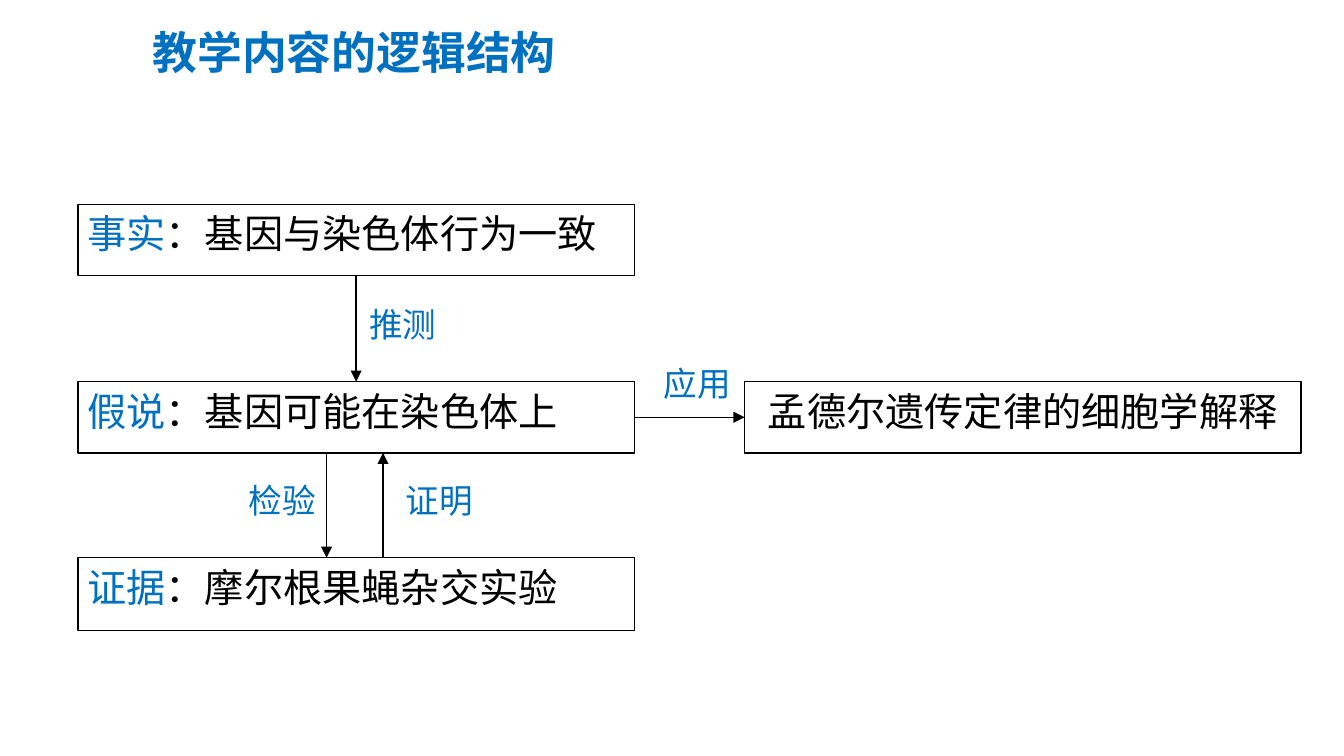
"""Build a slide showing the logical structure of a genetics lesson."""
from lxml.etree import SubElement
from pptx import Presentation
from pptx.dml.color import RGBColor
from pptx.enum.shapes import MSO_CONNECTOR as Connector, MSO_SHAPE as Shape
from pptx.enum.text import MSO_ANCHOR as Anchor, MSO_AUTO_SIZE as AutoSize, PP_ALIGN as Align
from pptx.oxml.ns import qn
from pptx.util import Inches, Pt

FONT = "Noto Sans CJK SC"
BLUE, BLACK, WHITE = "0070C0", "000000", "FFFFFF"
BOX_WIDTH, BOX_HEIGHT, EVIDENCE_HEIGHT = 4.14, 0.53, 0.54
LEFT, RIGHT = 0.58, 5.54
FACT_TOP, HYPOTHESIS_TOP, EVIDENCE_TOP = 1.52, 2.84, 4.15


def color(hex_string):
    return RGBColor.from_string(hex_string)


def add_span(para, text, size, hex_string, bold=False):
    span = para.add_run()
    span.text = text
    span.font.size = Pt(size)
    span.font.bold = bold
    span.font.name = FONT
    span.font.color.rgb = color(hex_string)
    SubElement(span.font._element, qn("a:ea"), typeface=FONT)


deck = Presentation()
deck.slide_width = Inches(10)
deck.slide_height = Inches(10) * 9 // 16
page = deck.slides.add_slide(deck.slide_layouts[5])

title = page.shapes.title
title.left, title.top = Inches(0.18), Inches(0.09)
title.width, title.height = Inches(4.91), Inches(0.55)
title.text_frame.vertical_anchor = Anchor.BOTTOM
title.text_frame.auto_size = AutoSize.NONE
title_para = title.text_frame.paragraphs[0]
title_para.alignment = Align.CENTER
title_para.line_spacing = 0.9
add_span(title_para, "教学内容的逻辑结构", 24, BLUE, bold=True)

boxes = []
for left, top, height, heading, text, alignment in [
    (LEFT, FACT_TOP, BOX_HEIGHT, "事实", "：基因与染色体行为一致", Align.LEFT),
    (LEFT, HYPOTHESIS_TOP, BOX_HEIGHT, "假说", "：基因可能在染色体上", Align.LEFT),
    (LEFT, EVIDENCE_TOP, EVIDENCE_HEIGHT, "证据", "：摩尔根果蝇杂交实验", Align.LEFT),
    (RIGHT, HYPOTHESIS_TOP, BOX_HEIGHT, "", "孟德尔遗传定律的细胞学解释", Align.CENTER),
]:
    box = page.shapes.add_shape(
        Shape.RECTANGLE, Inches(left), Inches(top), Inches(BOX_WIDTH), Inches(height))
    box.shadow.inherit = False
    box.fill.solid()
    box.fill.fore_color.rgb = color(WHITE)
    box.line.color.rgb = color(BLACK)
    box.line.width = Pt(0.75)
    frame = box.text_frame
    frame.word_wrap = True
    frame.vertical_anchor = Anchor.TOP
    frame.margin_left = frame.margin_right = Inches(0.07)
    frame.margin_top = frame.margin_bottom = Inches(0.04)
    para = frame.paragraphs[0]
    para.alignment = alignment
    if heading:
        add_span(para, heading, 21, BLUE)
    add_span(para, text, 21, BLACK)
    boxes.append(box)
fact, hypothesis, evidence, application = boxes

middle = LEFT + BOX_WIDTH / 2
hypothesis_bottom = HYPOTHESIS_TOP + BOX_HEIGHT
hypothesis_middle = HYPOTHESIS_TOP + BOX_HEIGHT / 2
arrows = []
for start_x, start_y, end_x, end_y in [
    (middle, FACT_TOP + BOX_HEIGHT, middle, HYPOTHESIS_TOP),
    (2.43, hypothesis_bottom, 2.43, EVIDENCE_TOP),
    (2.85, EVIDENCE_TOP, 2.85, hypothesis_bottom),
    (LEFT + BOX_WIDTH, hypothesis_middle, RIGHT, hypothesis_middle),
]:
    arrow = page.shapes.add_connector(
        Connector.STRAIGHT, Inches(start_x), Inches(start_y), Inches(end_x), Inches(end_y))
    arrow.line.color.rgb = color(BLACK)
    arrow.line.width = Pt(0.75)
    SubElement(arrow.line._get_or_add_ln(), qn("a:tailEnd"), type="triangle")
    SubElement(arrow._element.spPr, qn("a:effectLst"))
    arrows.append(arrow)
inference, test, proof, use = arrows
inference.begin_connect(fact, 2)
inference.end_connect(hypothesis, 0)
use.begin_connect(hypothesis, 3)
use.end_connect(application, 1)

for left, top, width, text in [
    (2.65, 2.21, 1.62, "推测"),
    (1.75, 3.52, 0.89, "检验"),
    (2.92, 3.52, 0.87, "证明"),
    (4.84, 2.65, 1.62, "应用"),
]:
    label = page.shapes.add_textbox(Inches(left), Inches(top), Inches(width), Inches(0.4))
    label.text_frame.word_wrap = True
    label.text_frame.auto_size = AutoSize.SHAPE_TO_FIT_TEXT
    add_span(label.text_frame.paragraphs[0], text, 18, BLUE)

deck.save("out.pptx")
